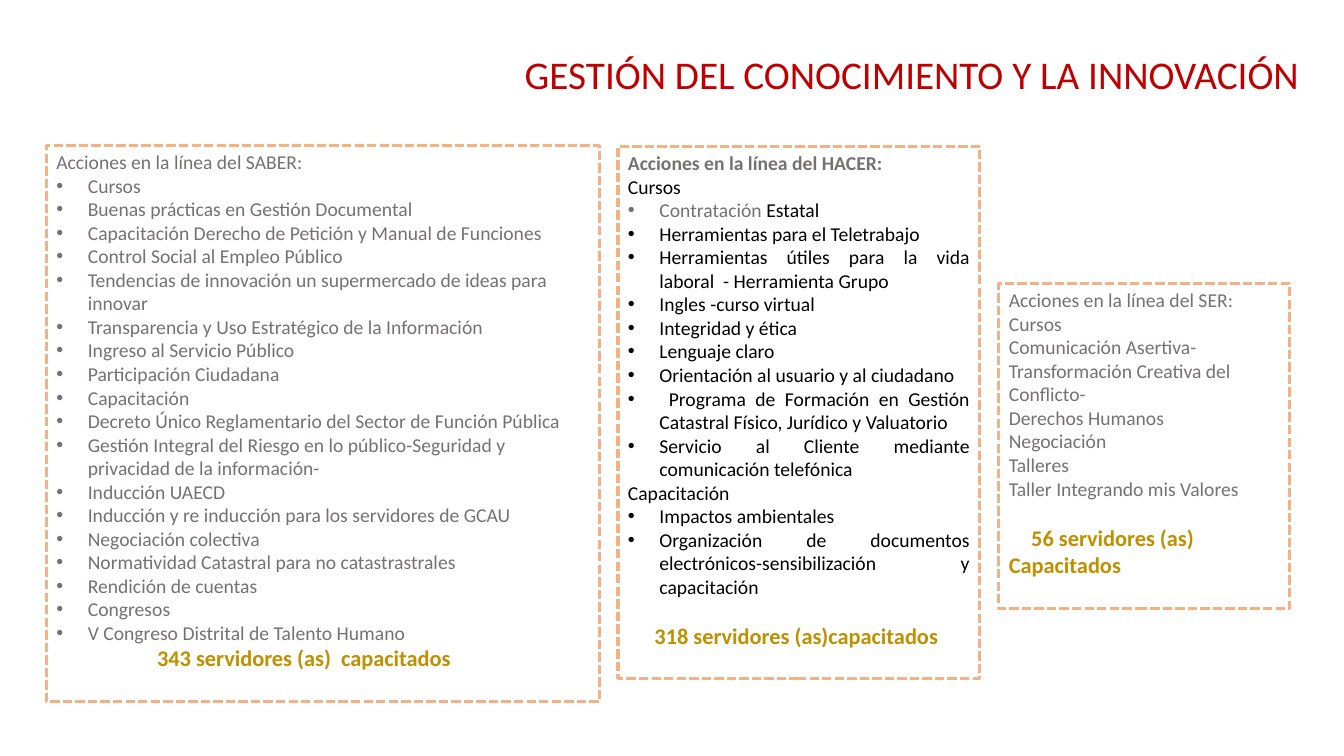
"""Build the slide on knowledge management and innovation training actions."""
from lxml import etree
from pptx import Presentation
from pptx.dml.color import RGBColor
from pptx.enum.dml import MSO_LINE
from pptx.enum.shapes import MSO_SHAPE
from pptx.enum.text import MSO_ANCHOR, PP_ALIGN
from pptx.oxml.ns import qn
from pptx.util import Pt

RED = RGBColor(0xC0, 0x00, 0x00)
GRAY = RGBColor(0x76, 0x71, 0x71)
BLACK = RGBColor(0x00, 0x00, 0x00)
GOLD = RGBColor(0xBF, 0x90, 0x00)
ORANGE = RGBColor(0xF4, 0xB1, 0x83)
RECTANGLE = MSO_SHAPE.RECTANGLE
DASHED = MSO_LINE.SQUARE_DOT
TOP, BOTTOM = MSO_ANCHOR.TOP, MSO_ANCHOR.BOTTOM
LEFT, CENTER, JUSTIFY = PP_ALIGN.LEFT, PP_ALIGN.CENTER, PP_ALIGN.JUSTIFY
BULLET_INDENT = Pt(22.5)
BLANK_LINE = Pt(17)


def add_run(paragraph, text, size, color, bold=False):
    run = paragraph.add_run()
    run.text = text
    run.font.name = "Calibri"
    run.font.size = Pt(size)
    run.font.bold = bold
    run.font.color.rgb = color


def set_indent(paragraph, margin, first_line, bullet=False):
    properties = paragraph._p.get_or_add_pPr()
    properties.set("marL", str(margin))
    properties.set("indent", str(first_line))
    if bullet:
        etree.SubElement(properties, qn("a:buFont")).set("typeface", "Arial")
        etree.SubElement(properties, qn("a:buChar")).set("char", "•")


saber_actions = [
    "• Cursos",
    "• Buenas prácticas en Gestión Documental",
    "• Capacitación Derecho de Petición y Manual de Funciones",
    "• Control Social al Empleo Público",
    "• Tendencias de innovación un supermercado de ideas para innovar",
    "• Transparencia y Uso Estratégico de la Información",
    "• Ingreso al Servicio Público",
    "• Participación Ciudadana",
    "• Capacitación",
    "• Decreto Único Reglamentario del Sector de Función Pública",
    "• Gestión Integral del Riesgo en lo público-Seguridad y privacidad de la información-",
    "• Inducción UAECD",
    "• Inducción y re inducción para los servidores de GCAU",
    "• Negociación colectiva",
    "• Normatividad Catastral para no catastrastrales",
    "• Rendición de cuentas",
    "• Congresos",
    "• V Congreso Distrital de Talento Humano",
]
hacer_actions = [
    "Cursos",
    "• Contratación| Estatal",
    "• Herramientas para el Teletrabajo",
    "• Herramientas útiles para la vida laboral  - Herramienta Grupo",
    "• Ingles -curso virtual",
    "• Integridad y ética",
    "• Lenguaje claro",
    "• Orientación al usuario y al ciudadano",
    "•  Programa de Formación en Gestión Catastral Físico, Jurídico y Valuatorio",
    "• Servicio al Cliente mediante comunicación telefónica",
    "Capacitación",
    "• Impactos ambientales",
    "• Organización de documentos electrónicos-sensibilización y capacitación",
]
ser_actions = [
    "Cursos",
    "Comunicación Asertiva-Transformación Creativa del Conflicto-",
    "Derechos Humanos",
    "Negociación",
    "Talleres",
    "Taller Integrando mis Valores",
]
panels = [
    ("SABER", (33.1, 103.7, 395.3, 397.4), saber_actions, LEFT, GRAY,
     "343 servidores (as)  capacitados", 72, 0),
    ("HACER", (441.4, 104.4, 258.5, 380.2), hacer_actions, JUSTIFY, BLACK,
     "318 servidores (as)capacitados", 19, BLANK_LINE),
    ("SER", (713.5, 202.3, 207.4, 232.6), ser_actions, LEFT, GRAY,
     "56 servidores (as) Capacitados", 16, BLANK_LINE),
]

presentation = Presentation()
presentation.slide_width, presentation.slide_height = Pt(960), Pt(540)
slide = presentation.slides.add_slide(presentation.slide_layouts[6])

title = slide.shapes.add_textbox(Pt(342.7), Pt(25.2), Pt(617), Pt(48.2)).text_frame
title.word_wrap = True
title.vertical_anchor = BOTTOM
heading = title.paragraphs[0]
heading.alignment = CENTER
heading.line_spacing = 0.9
add_run(heading, "GESTIÓN DEL CONOCIMIENTO Y LA INNOVACIÓN", 28, RED)

for line_name, bounds, actions, alignment, color, total, total_indent, gap in panels:
    panel = slide.shapes.add_shape(RECTANGLE, *[Pt(length) for length in bounds])
    panel.shadow.inherit = False
    panel.fill.background()
    panel.line.color.rgb = ORANGE
    panel.line.width = Pt(2.25)
    panel.line.dash_style = DASHED
    frame = panel.text_frame
    frame.word_wrap = True
    frame.vertical_anchor = TOP

    heading = frame.paragraphs[0]
    heading.alignment = LEFT
    add_run(heading, f"Acciones en la línea del {line_name}:", 14, GRAY, line_name == "HACER")

    for action in actions:
        paragraph = frame.add_paragraph()
        paragraph.alignment = alignment
        if action.startswith("• "):
            set_indent(paragraph, BULLET_INDENT, -BULLET_INDENT, bullet=True)
        muted, divider, wording = action.removeprefix("• ").rpartition("|")
        if divider:
            add_run(paragraph, muted, 14, GRAY)
        add_run(paragraph, wording, 14, color)

    paragraph = frame.add_paragraph()
    paragraph.alignment = LEFT
    paragraph.space_before = gap
    set_indent(paragraph, 0, Pt(total_indent))
    add_run(paragraph, total, 16, GOLD, True)

presentation.save("out.pptx")
